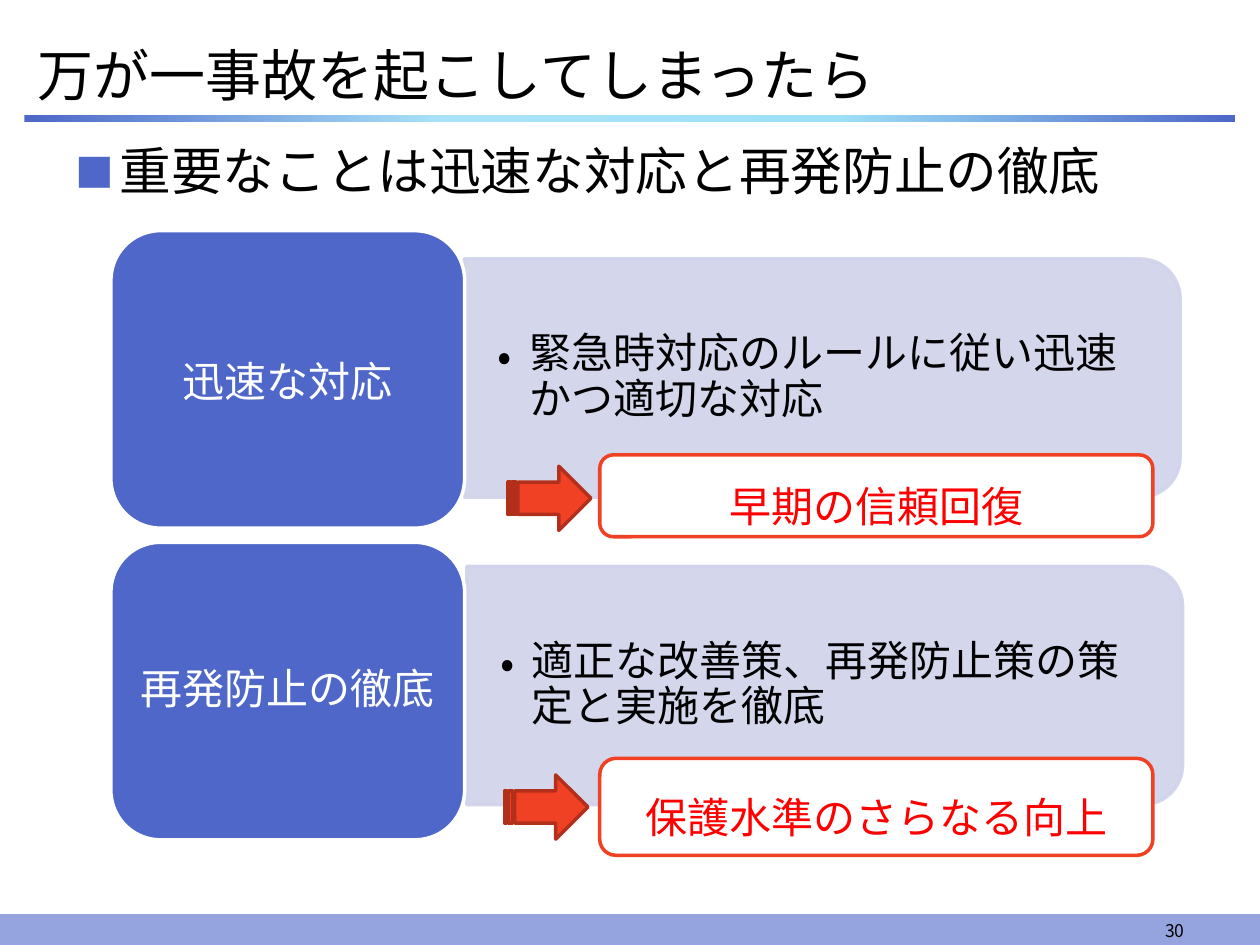
"""Build the slide on responding to an accident and preventing a recurrence."""
import pptx
import pptx.util
import pptx.dml.color
import pptx.enum.shapes
import pptx.enum.text
import pptx.oxml
from pptx.util import Pt

FONT = "Noto Sans CJK JP"
NS = 'xmlns:a="http://schemas.openxmlformats.org/drawingml/2006/main"'
SHAPE = pptx.enum.shapes.MSO_SHAPE
ALIGN = pptx.enum.text.PP_ALIGN
ANCHOR = pptx.enum.text.MSO_ANCHOR
rgb = pptx.dml.color.RGBColor.from_string

deck = pptx.Presentation()
deck.slide_width, deck.slide_height = Pt(720), Pt(540)
slide = deck.slides.add_slide(deck.slide_layouts[6])


def add_box(kind, left, top, width, height, fill, line, weight):
    box = slide.shapes.add_shape(kind, Pt(left), Pt(top), Pt(width), Pt(height))
    box.shadow.inherit = False
    box.fill.solid()
    box.fill.fore_color.rgb = rgb(fill)
    box.line.color.rgb = rgb(line)
    box.line.width = Pt(weight)
    return box


def write(holder, text, size, color, align=ALIGN.LEFT, anchor=ANCHOR.MIDDLE,
          insets=(7.2, 3.6, 7.2, 3.6), spacing=None, bullet=None, indent=0):
    frame = holder.text_frame
    frame.word_wrap = True
    frame.vertical_anchor = anchor
    (frame.margin_left, frame.margin_top,
     frame.margin_right, frame.margin_bottom) = map(Pt, insets)
    paragraph = frame.paragraphs[0]
    paragraph.text = text
    paragraph.alignment = align
    paragraph.line_spacing = spacing
    paragraph.font.size = Pt(size)
    paragraph.font.color.rgb = rgb(color)
    paragraph.font.name = FONT
    properties = paragraph._p.get_or_add_pPr()
    defaults = properties.defRPr
    defaults.append(pptx.oxml.parse_xml(f'<a:ea {NS} typeface="{FONT}"/>'))
    if bullet:
        properties.set("marL", str(Pt(indent)))
        properties.set("indent", str(-Pt(indent)))
        mark, mark_color, percent = bullet
        for part in (f'<a:buClr {NS}><a:srgbClr val="{mark_color}"/></a:buClr>',
                     f'<a:buSzPct {NS} val="{percent * 1000}"/>',
                     f'<a:buFont {NS} typeface="{FONT}"/>',
                     f'<a:buChar {NS} char="{mark}"/>'):
            defaults.addprevious(pptx.oxml.parse_xml(part))


add_box(SHAPE.RECTANGLE, 0, 522.7, 720, 17.3, "95A4DE", "95A4DE", 0.75)

title_rule = add_box(SHAPE.RECTANGLE, 14, 66, 692, 3.8, "4E67C8", "4E67C8", 0.75)
title_rule.line.fill.background()
stops = "".join(
    f'<a:gs pos="{place * 1000}"><a:srgbClr val="{color}"/></a:gs>'
    for place, color in ((0, "4E67C8"), (35, "A9E3F8"), (67, "9EE0F7"), (100, "4E67C8")))
solid = title_rule._element.spPr.find(pptx.oxml.ns.qn("a:solidFill"))
solid.getparent().replace(solid, pptx.oxml.parse_xml(
    f'<a:gradFill {NS}><a:gsLst>{stops}</a:gsLst><a:lin ang="0" scaled="0"/></a:gradFill>'))

title = slide.shapes.add_textbox(Pt(14.4), Pt(18.7), Pt(692), Pt(46.8))
write(title, "万が一事故を起こしてしまったら", 32, "000000")

message = slide.shapes.add_textbox(Pt(36), Pt(80), Pt(648), Pt(427))
write(message, "重要なことは迅速な対応と再発防止の徹底", 29.5, "000000", anchor=ANCHOR.TOP,
      spacing=0.9, bullet=("■", "4E67C8", 75), indent=25.2)

page_number = slide.shapes.add_textbox(Pt(516), Pt(519), Pt(168), Pt(22.3))
write(page_number, "30", 10, "000000", ALIGN.RIGHT, ANCHOR.BOTTOM)

measures = [
    ("迅速な対応", 131.8, 8.6, "緊急時対応のルールに従い迅速かつ適切な対応", 401.8, 11.5),
    ("再発防止の徹底", 309.9, 3.6, "適正な改善策、再発防止策の策定と実施を徹底", 403.2, 187.2),
]
for heading, tile_top, inset_top, detail, panel_left, panel_top in measures:
    panel = add_box(SHAPE.ROUND_2_SAME_RECTANGLE, panel_left, panel_top, 136.1, 409,
                    "D0D3EB", "D0D3EB", 2)
    panel.rotation = 90
    for color in panel._element.spPr.iter(pptx.oxml.ns.qn("a:srgbClr")):
        color.append(pptx.oxml.parse_xml(f'<a:alpha {NS} val="90000"/>'))

    detail_box = slide.shapes.add_textbox(
        Pt(panel_left - 136.8), Pt(panel_top + 143.3), Pt(402.5), Pt(122.4))
    write(detail_box, detail, 24, "000000", insets=(19.4, 10, 19.4, 10),
          spacing=0.9, bullet=("•", "000000", 100), indent=18)

    tile = add_box(SHAPE.ROUNDED_RECTANGLE, 63.4, tile_top, 202.1, 170, "4E67C8", "FFFFFF", 2)
    write(tile, heading, 24, "FFFFFF", ALIGN.CENTER,
          insets=(5, inset_top, 5, 3.6), spacing=0.9)

outcomes = [
    ("早期の信頼回復", 259.9, 46.8, 290.2, 266.4),
    ("保護水準のさらなる向上", 433.4, 55.4, 288.4, 442.8),
]
for outcome, top, height, arrow_left, arrow_top in outcomes:
    result = add_box(SHAPE.FLOWCHART_ALTERNATE_PROCESS, 342.7, top, 316.1, height,
                     "FFFFFF", "F14124", 2)
    write(result, outcome, 24, "FF0000", ALIGN.CENTER, insets=(5, 17.3, 5, 5.8))
    add_box(SHAPE.STRIPED_RIGHT_ARROW, arrow_left, arrow_top, 47.5, 36.7,
            "F14124", "B2301B", 2)

deck.save("out.pptx")
